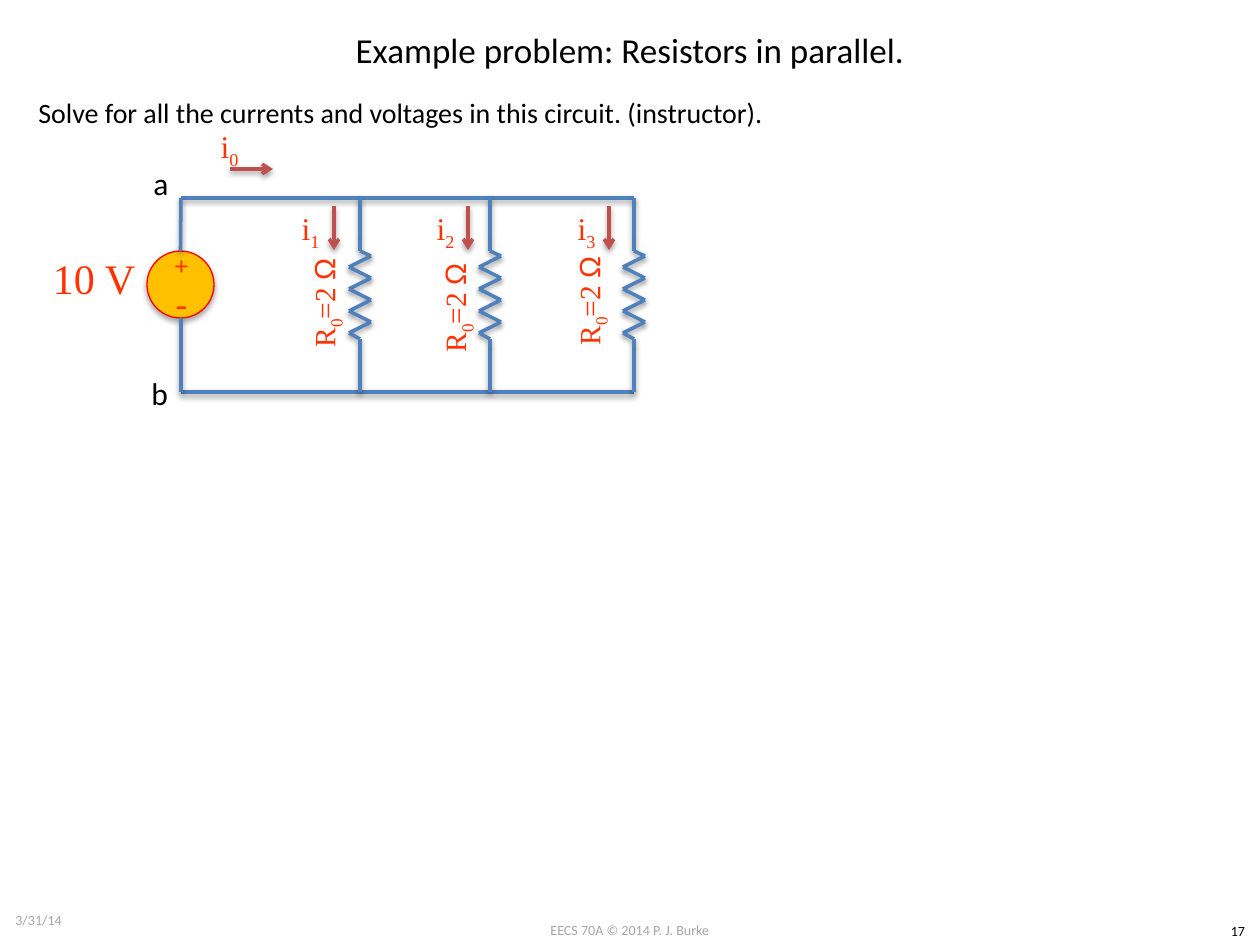
from lxml import etree
from pptx import Presentation
from pptx import util as u
from pptx.dml.color import RGBColor
from pptx.enum import shapes, text
from pptx.oxml import ns

PX = 914400 / 126
BLACK = RGBColor(0, 0, 0)
GREY = RGBColor(0xA6, 0xA6, 0xA6)
RED = RGBColor(0xFF, 0x33, 0x00)
EDGE = RGBColor(0xFF, 0, 0)
GOLD = RGBColor(0xFF, 0xC0, 0x00)
BLUE = RGBColor(0x4F, 0x81, 0xBD)
BRICK = RGBColor(0xC0, 0x50, 0x4D)
SANS, SERIF = "Calibri", "Times New Roman"
LEFT, MID = text.PP_ALIGN.LEFT, text.PP_ALIGN.CENTER
TOP, HALF = text.MSO_ANCHOR.TOP, text.MSO_ANCHOR.MIDDLE


def px(n):
    """Turn px into EMU."""
    return u.Emu(round(n * PX))


def sub(parent, tag, **attrs):
    """Append a DrawingML child element."""
    return etree.SubElement(parent, ns.qn("a:" + tag), attrs)


def shade(item, dist=20000, alpha=38000):
    """Give an item a soft shadow straight below it."""
    props = item._element.spPr
    for old in props.findall(ns.qn("a:effectLst")):
        props.remove(old)
    cast = sub(sub(props, "effectLst"), "outerShdw", blurRad="40000",
               dist=str(dist), dir="5400000", rotWithShape="0")
    sub(sub(cast, "srgbClr", val="000000"), "alpha", val=str(alpha))


def wire(host, start, end, color=BLUE, arrow=False):
    """Draw a straight line with a shadow, with an arrowhead if asked."""
    line = host.add_connector(shapes.MSO_CONNECTOR.STRAIGHT,
                              *map(px, start + end))
    line.line.color.rgb = color
    line.line.width = u.Pt(2)
    if arrow:
        sub(line.line._get_or_add_ln(), "tailEnd", type="arrow")
    shade(line)
    return line


def write(host, box, words, size, font=SERIF, color=RED, align=MID,
          anchor=HALF, bold=False, wrap=True, turn=0, inset=None):
    """Write runs, each a string or a (string, changes) pair, in a box."""
    area = host.add_textbox(*map(px, box))
    area.rotation = turn
    frame = area.text_frame
    frame.word_wrap = wrap
    frame.vertical_anchor = anchor
    if inset is not None:
        frame.margin_left = frame.margin_right = px(inset)
        frame.margin_top = frame.margin_bottom = px(inset)
    para = frame.paragraphs[0]
    para.alignment = align
    for word in words:
        label, change = (word, {}) if isinstance(word, str) else word
        run = para.add_run()
        run.text = label
        run.font.size = u.Pt(size)
        run.font.name = change.get("font", font)
        run.font.bold = bold
        run.font.color.rgb = color
        if "base" in change:
            run._r.get_or_add_rPr().set("baseline", str(change["base"]))


def low(mark):
    """Return a run set as a subscript."""
    return mark, {"base": -25000}


def flow(host, start, end, box, mark):
    """Place a current arrow and its label."""
    wire(host, start, end, BRICK, True)
    write(host, box + (117, 66), ["i", low(mark)], 18)


def zigzag(host, x, y, tall):
    """Group the lines of one resistor and its leads."""
    group = host.add_group_shape().shapes
    teeth = [(x + (11 if n % 2 == 0 else -11), y + 58 + 11 * n)
             for n in range(8)]
    dots = [(x, y), (x, y + 41), (x, y + 53), *teeth,
            (x, y + 141), (x, y + 152), (x, y + tall)]
    for start, end in zip(dots, dots[1:]):
        wire(group, start, end)


def branch(host, x, y, tall, mark, tip, name, ohm):
    """Place a resistor, its value and its current."""
    zigzag(host, x, y, tall)
    flow(host, (x + tip, y + 8), (x + tip, y + 52), (x + name, y), mark)
    write(host, (x + ohm[0], y + ohm[1], 126, 66),
          ["R", low("0"), "=2 ", ("Ω", {"font": "Arial"})], 16.8, turn=270)


def source(host, x, y, tall):
    """Place the voltage source with its wires and marks."""
    disc = host.add_shape(shapes.MSO_SHAPE.OVAL,
                          *map(px, (x - 34, y + 53, 67, 67)))
    disc.fill.solid()
    disc.fill.fore_color.rgb = GOLD
    disc.line.color.rgb = EDGE
    disc.line.width = u.Pt(0.75)
    shade(disc, 23000, 35000)
    lead = wire(host, (x, y), (x, y + 53))
    lead.end_connect(disc, 0)
    wire(host, (x, y + tall), (x, y + 120))
    write(host, (x - 16, y + 46, 33, 42), ["+"], 14.8, bold=True, inset=0)
    write(host, (x - 16, y + 83, 33, 42), ["-"], 20, inset=0)
    write(host, (x - 142, y + 49, 110, 62), ["10 V"], 24, inset=0)


def circuit(host, x, y, wide, tall):
    """Place the source, rails, branches and node names."""
    for rail in (y, y + tall):
        wire(host, (x + wide, rail), (x, rail))
    source(host, x, y, tall)
    flow(host, (x + 49, y - 29), (x + 92, y - 29), (x - 10, y - 82), "0")
    for step, *rest in ((179, "1", -26, -108, (-97, 72)),
                        (309, "2", -22, -103, (-96, 77)),
                        (wide, "3", -25, -106, (-106, 70))):
        branch(host, x + step, y, tall, *rest)
    for name, left, top in (("a", -40, -40), ("b", -42, 170)):
        write(host, (x + left, y + top, 42, 50), [name], 18, SANS, BLACK,
              LEFT, TOP, wrap=False)


def header(host, x, y, wide):
    """Place the title and the task."""
    write(host, (x + 63, y, wide - 126, 98),
          ["Example problem: Resistors in parallel."], 20, SANS, BLACK)
    write(host, (x + 26, y + 89, 752, 47),
          ["Solve for all the currents and voltages in this circuit. "
           "(instructor)."], 16, SANS, BLACK, LEFT, TOP, wrap=False)


def footer(host, x, y, wide):
    """Place the date, the course line and the page number."""
    write(host, (x + 3, y, 294, 50), ["3/31/14"], 8, SANS, GREY, LEFT)
    write(host, (x + 483, y + 20, 294, 30), ["EECS 70A © 2014 P. J. Burke"],
          8, SANS, GREY, anchor=TOP)
    write(host, (x + wide - 44, y + 21, 44, 30), ["17"], 8, SANS, BLACK,
          anchor=TOP)


def main():
    """Build and save the slide."""
    deck = Presentation()
    deck.slide_width, deck.slide_height = px(1260), px(945)
    host = deck.slides.add_slide(deck.slide_layouts[6]).shapes
    header(host, 0, 0, 1260)
    circuit(host, 181, 198, 453, 194)
    footer(host, 0, 895, 1260)
    deck.save("out.pptx")


if __name__ == "__main__":
    main()
